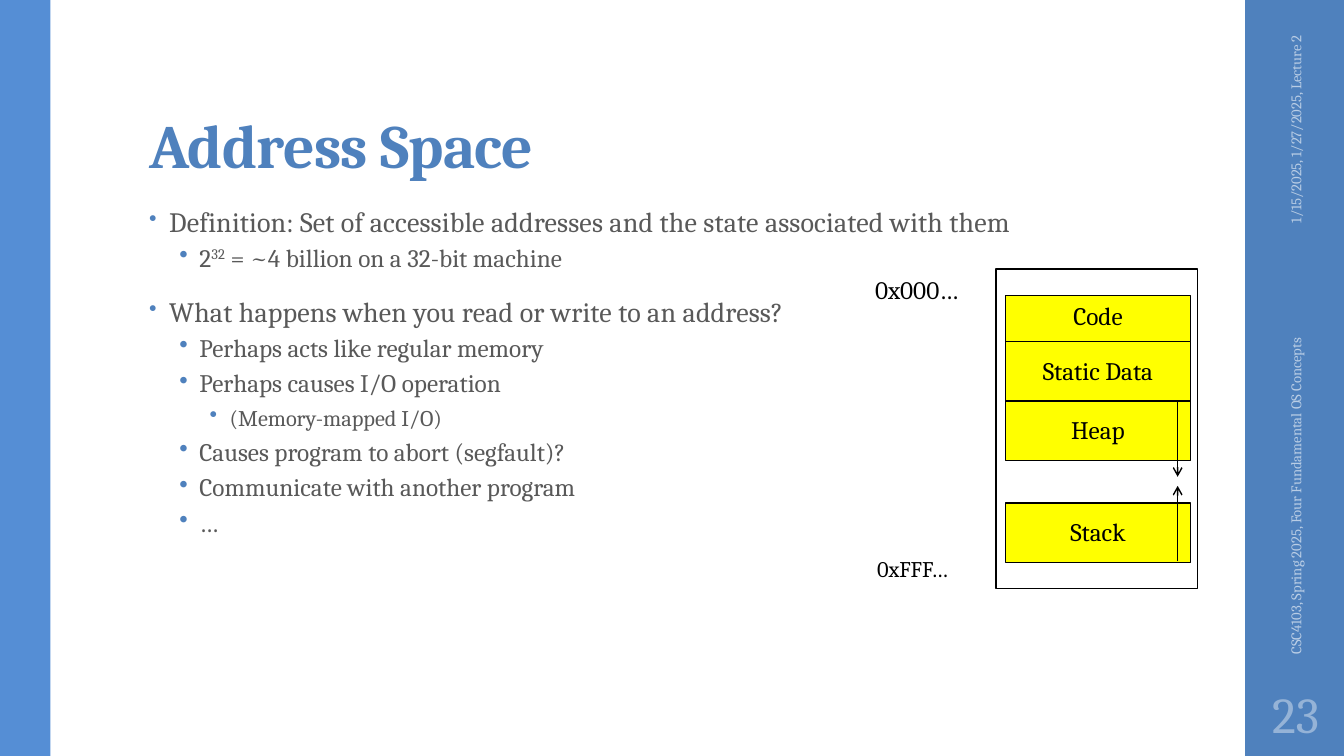
from lxml.etree import SubElement
from pptx import Presentation
from pptx.dml.color import RGBColor
from pptx.enum.shapes import MSO_CONNECTOR, MSO_SHAPE
from pptx.enum.text import MSO_ANCHOR, MSO_AUTO_SIZE, PP_ALIGN
from pptx.oxml.ns import qn
from pptx.util import Inches, Pt

FONT = "Cambria"
BLUE = RGBColor(0x4F, 0x81, 0xBD)
SKY = RGBColor(0x55, 0x8E, 0xD5)
PALE = RGBColor(0xB9, 0xCD, 0xE5)
MIST = RGBColor(0x95, 0xB3, 0xD7)
GRAY = RGBColor(0x59, 0x59, 0x59)
BLACK = RGBColor(0, 0, 0)
YELLOW = RGBColor(0xFF, 0xFF, 0)

# Per outline level: text size, line spacing, space before, space after
LEVELS = [(20, 0.95, 14, 2), (18, 0.9, 3, 3), (16, 0.9, 3, 3)]
POINTS = [
    (0, ["Definition: Set of accessible addresses and the state associated with them"]),
    (1, ["2", "32", " = ~4 billion on a 32-bit machine"]),
    (0, ["What happens when you read or write to an address?"]),
    (1, ["Perhaps acts like regular memory"]),
    (1, ["Perhaps causes I/O operation"]),
    (2, ["(Memory-mapped I/O)"]),
    (1, ["Causes program to abort (segfault)?"]),
    (1, ["Communicate with another program"]),
    (1, ["…"]),
]
# Name, top within the memory box, height, top inset of the text
PARTS = [
    ("Code", 0.26, 0.46, 0.05),
    ("Static Data", 0.72, 0.59, 0.13),
    ("Heap", 1.31, 0.59, 0.13),
    ("Stack", 2.32, 0.59, 0.13),
]


def write(para, text, size=18, color=BLACK, bold=False, space=0, base=0,
          align=None):
    """Add a run; space is tracking in points, base a raise in percent."""
    run = para.add_run()
    run.text = text
    font = run.font
    font.name, font.size, font.bold = FONT, Pt(size), bold
    font.color.rgb = color
    props = run._r.get_or_add_rPr()
    if space:
        props.set("spc", str(round(space * 100)))
    if base:
        props.set("baseline", str(base * 1000))
    if align is not None:
        para.alignment = align


def inset(frame, left, top, right, bottom):
    frame.margin_left, frame.margin_top = Inches(left), Inches(top)
    frame.margin_right, frame.margin_bottom = Inches(right), Inches(bottom)


def label(slide, box, text, turn=0, wrap=True, anchor=MSO_ANCHOR.MIDDLE, **form):
    shape = slide.shapes.add_textbox(*map(Inches, box))
    shape.rotation = turn
    frame = shape.text_frame
    frame.word_wrap, frame.vertical_anchor = wrap, anchor
    write(frame.paragraphs[0], text, **form)
    return frame


def block(slide, box, fill=None, line=None):
    shape = slide.shapes.add_shape(MSO_SHAPE.RECTANGLE, *map(Inches, box))
    shape.shadow.inherit = False
    if fill is None:
        shape.fill.background()
    else:
        shape.fill.solid()
        shape.fill.fore_color.rgb = fill
    if line is None:
        shape.line.fill.background()
    else:
        shape.line.color.rgb = line
        shape.line.width = Pt(1)
    return shape


def arrow(slide, x, start, end):
    link = slide.shapes.add_connector(
        MSO_CONNECTOR.STRAIGHT, *map(Inches, (x, start, x, end)))
    link.line.color.rgb = BLACK
    link.line.width = Pt(1)
    SubElement(link.line._get_or_add_ln(), qn("a:tailEnd"), type="arrow")
    SubElement(link._element.spPr, qn("a:effectLst"))


def bullet(para, level):
    props = para._p.get_or_add_pPr()
    props.set("marL", str(Inches(0.2 + 0.3 * level)))
    props.set("indent", str(Inches(-0.2)))
    color = SubElement(props, qn("a:buClr"))
    SubElement(color, qn("a:srgbClr"), val=str(BLUE))
    if level == 0:
        SubElement(props, qn("a:buSzPct"), val="80000")
    SubElement(props, qn("a:buChar"), char="•")


def heading(slide, box, text):
    title = slide.shapes.title
    title.left, title.top, title.width, title.height = map(Inches, box)
    frame = title.text_frame
    frame.auto_size = MSO_AUTO_SIZE.NONE
    frame.vertical_anchor = MSO_ANCHOR.BOTTOM
    inset(frame, 0.1, 0.03, 0.1, 0.05)
    para = frame.paragraphs[0]
    para.line_spacing = 0.9
    write(para, text, size=44, color=BLUE, bold=True, space=-0.5,
          align=PP_ALIGN.LEFT)


def outline(slide, box):
    frame = slide.shapes.add_textbox(*map(Inches, box)).text_frame
    frame.word_wrap = True
    for i, (level, runs) in enumerate(POINTS):
        para = frame.add_paragraph() if i else frame.paragraphs[0]
        size, lines, before, after = LEVELS[level]
        para.level = level
        bullet(para, level)
        para.line_spacing = lines
        para.space_before = Pt(before if i else 0)
        para.space_after = Pt(after)
        for j, text in enumerate(runs):
            write(para, text, size=size, color=GRAY,
                  space=0 if level else 0.1, base=30 if j == 1 else 0)


def sidebar(slide, box):
    x, y, w, h = box
    block(slide, box, fill=BLUE)
    label(slide, (x - 0.54, y + 1.09, 2.08, 0.4), turn=270, size=10.5,
          text="1/15/2025, 1/27/2025, Lecture 2", color=PALE,
          align=PP_ALIGN.RIGHT)
    label(slide, (x - 1.46, y + 4.43, 3.92, 0.4), turn=270, size=10.5,
          text="CSC4103, Spring 2025, Four Fundamental OS Concepts", color=PALE)
    page = label(slide, (x, y + h - 0.75, w, 0.65), "23", size=36, color=MIST,
                 align=PP_ALIGN.CENTER)
    inset(page, 0.05, 0.05, 0.05, 0.05)


def memory(slide, box):
    """Draw the address space with its end addresses to the left."""
    x, y, w, h = box
    block(slide, box, line=BLACK)
    label(slide, (x - 1.3, y, 1.15, 0.4), "0x000…", wrap=False,
          anchor=MSO_ANCHOR.TOP)
    label(slide, (x - 1.28, y + h - 0.38, 1.12, 0.37), "0xFFF…", wrap=False,
          anchor=MSO_ANCHOR.TOP, size=16)
    for name, top, tall, pad in PARTS:
        part = block(slide, (x + 0.09, y + top, w - 0.16, tall), YELLOW, BLACK)
        frame = part.text_frame
        frame.vertical_anchor = MSO_ANCHOR.TOP
        inset(frame, 0.1, pad, 0.1, 0)
        write(frame.paragraphs[0], name, align=PP_ALIGN.CENTER)
    arrow(slide, x + 1.8, y + 2.9, y + 2.15)
    arrow(slide, x + 1.8, y + 1.31, y + 2.06)


def main():
    deck = Presentation()
    deck.slide_width, deck.slide_height = Inches(13.33), Inches(7.5)
    slide = deck.slides.add_slide(deck.slide_layouts[5])
    block(slide, (0, 0, 0.5, 7.5), fill=SKY)
    sidebar(slide, (12.35, 0, 1, 7.5))
    heading(slide, (1.38, 0.32, 10.6, 1.53), "Address Space")
    outline(slide, (1.38, 2, 9.4, 4.76))
    memory(slide, (9.88, 2.67, 2, 3.17))
    deck.save("out.pptx")


if __name__ == "__main__":
    main()
